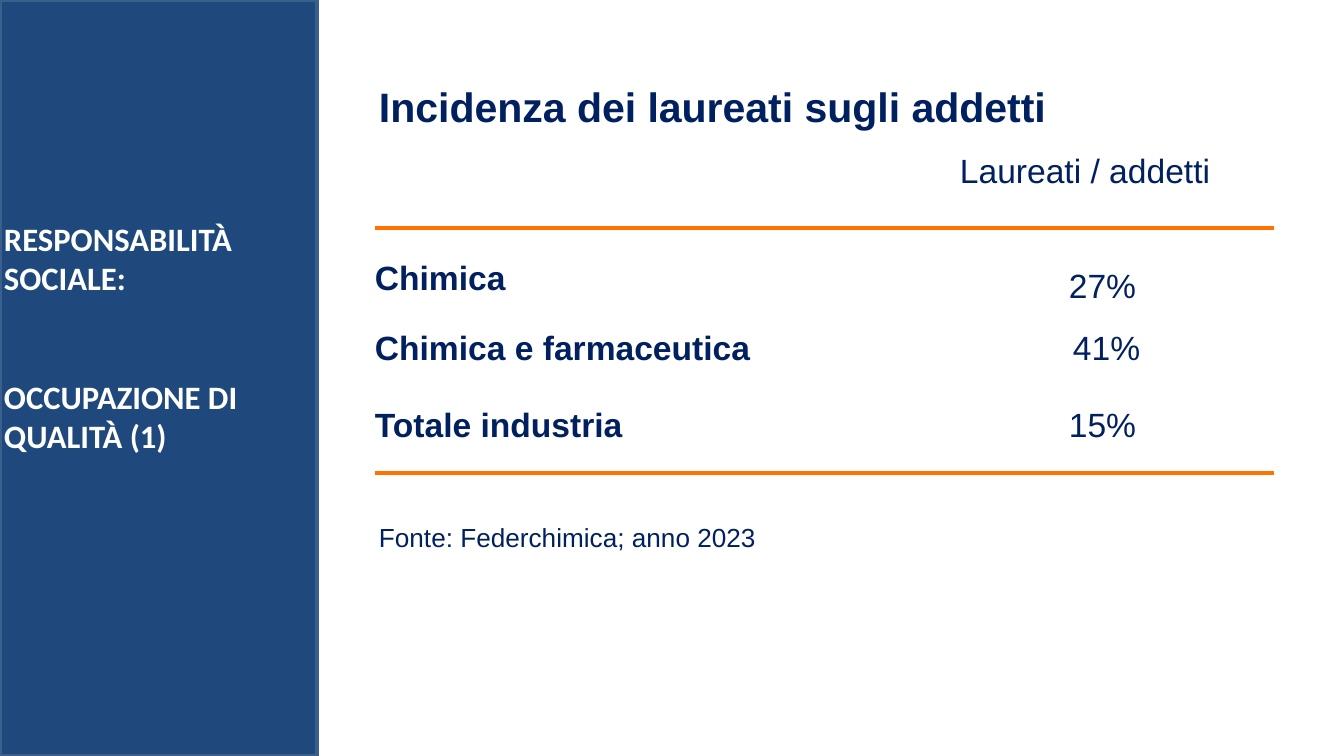
"""Build the slide on the share of graduates among employees."""
from dataclasses import dataclass

from lxml.etree import SubElement
from pptx import Presentation
from pptx.dml.color import RGBColor
from pptx.enum.shapes import MSO_CONNECTOR as Connector, MSO_SHAPE as Shape
from pptx.enum.text import MSO_ANCHOR as Anchor, MSO_AUTO_SIZE as AutoSize, PP_ALIGN as Align
from pptx.oxml.ns import qn
from pptx.util import Pt

TITLE = "Incidenza dei laureati sugli addetti"
SIDE_TOPICS = ["RESPONSABILITÀ SOCIALE:", "OCCUPAZIONE DI QUALITÀ (1)"]
HEADER = "Laureati / addetti"
SOURCE = "Fonte: Federchimica; anno 2023"
# Label, label top, share, share left, share top
SECTORS = [
    ("Chimica", 263, "27%", 1060, 271),
    ("Chimica e farmaceutica", 333, "41%", 1064, 333),
    ("Totale industria", 410, "15%", 1060, 410),
]
RULE_TOPS = [228, 473]

PX = 6804
WIDTH, HEIGHT = 1344, 756
PANEL_WIDTH = 317
TABLE_LEFT, TABLE_RIGHT = 375, 1274
ROW_HEIGHT = 35
INSET = 13


@dataclass(frozen=True)
class Theme:
    navy: str = "002060"
    panel: str = "1F497D"
    panel_edge: str = "3A5F8C"
    orange: str = "FF7401"
    white: str = "FFFFFF"
    font: str = "Arial"
    side_font: str = "Calibri"
    title_size: float = 22
    row_size: float = 18
    side_size: float = 17.5
    source_size: float = 14


THEME = Theme()


def rgb(value):
    return RGBColor.from_string(value)


def place(part, left, top, width, height):
    part.left, part.top, part.width, part.height = (n * PX for n in (left, top, width, height))


def write(part, lines, size, bold=False, color=THEME.navy, font=THEME.font,
          align=Align.LEFT, spacing=0.85, gap=0, inset=0):
    frame = part.text_frame
    frame.text = "\n".join(lines)
    frame.word_wrap = True
    frame.auto_size = AutoSize.NONE
    frame.vertical_anchor = Anchor.TOP
    frame.margin_left = frame.margin_right = inset * PX
    frame.margin_top = frame.margin_bottom = inset * PX // 2
    for index, paragraph in enumerate(frame.paragraphs):
        paragraph.alignment = align
        paragraph.line_spacing = spacing
        paragraph.space_before = Pt(gap if index else 0)
        for run in paragraph.runs:
            run.font.size = Pt(size)
            run.font.bold = bold
            run.font.name = font
            run.font.color.rgb = rgb(color)


def add_text(slide, box, lines, size, **style):
    part = slide.shapes.add_textbox(*(n * PX for n in box))
    write(part, lines, size, **style)


def add_panel(slide):
    panel = slide.shapes.add_shape(Shape.RECTANGLE, 0, 0, PANEL_WIDTH * PX, HEIGHT * PX)
    panel.shadow.inherit = False
    panel.fill.solid()
    panel.fill.fore_color.rgb = rgb(THEME.panel)
    panel.line.color.rgb = rgb(THEME.panel_edge)
    panel.line.width = Pt(2)
    add_text(slide, (-9, 212, 336, 251), SIDE_TOPICS, THEME.side_size, bold=True,
             color=THEME.white, font=THEME.side_font, spacing=1.0, gap=43, inset=INSET)


def add_rule(slide, top):
    rule = slide.shapes.add_connector(
        Connector.STRAIGHT, TABLE_LEFT * PX, top * PX, TABLE_RIGHT * PX, top * PX)
    rule.line.color.rgb = rgb(THEME.orange)
    rule.line.width = Pt(2.25)
    SubElement(rule.element.spPr, qn("a:effectLst"))


def main():
    deck = Presentation()
    deck.slide_width, deck.slide_height = WIDTH * PX, HEIGHT * PX
    slide = deck.slides.add_slide(deck.slide_layouts[5])

    add_panel(slide)
    place(slide.shapes.title, 366, 82, 771, 56)
    write(slide.shapes.title, [TITLE], THEME.title_size, bold=True, inset=INSET)
    add_text(slide, (960, 156, 271, ROW_HEIGHT), [HEADER], THEME.row_size)

    for top in RULE_TOPS:
        add_rule(slide, top)
    for label, label_top, share, share_left, share_top in SECTORS:
        add_text(slide, (TABLE_LEFT, label_top, 391, ROW_HEIGHT), [label],
                 THEME.row_size, bold=True)
        add_text(slide, (share_left, share_top, 85, ROW_HEIGHT), [share],
                 THEME.row_size, align=Align.CENTER)

    add_text(slide, (366, 520, 420, 40), [SOURCE], THEME.source_size, inset=INSET)
    deck.save("out.pptx")


if __name__ == "__main__":
    main()
